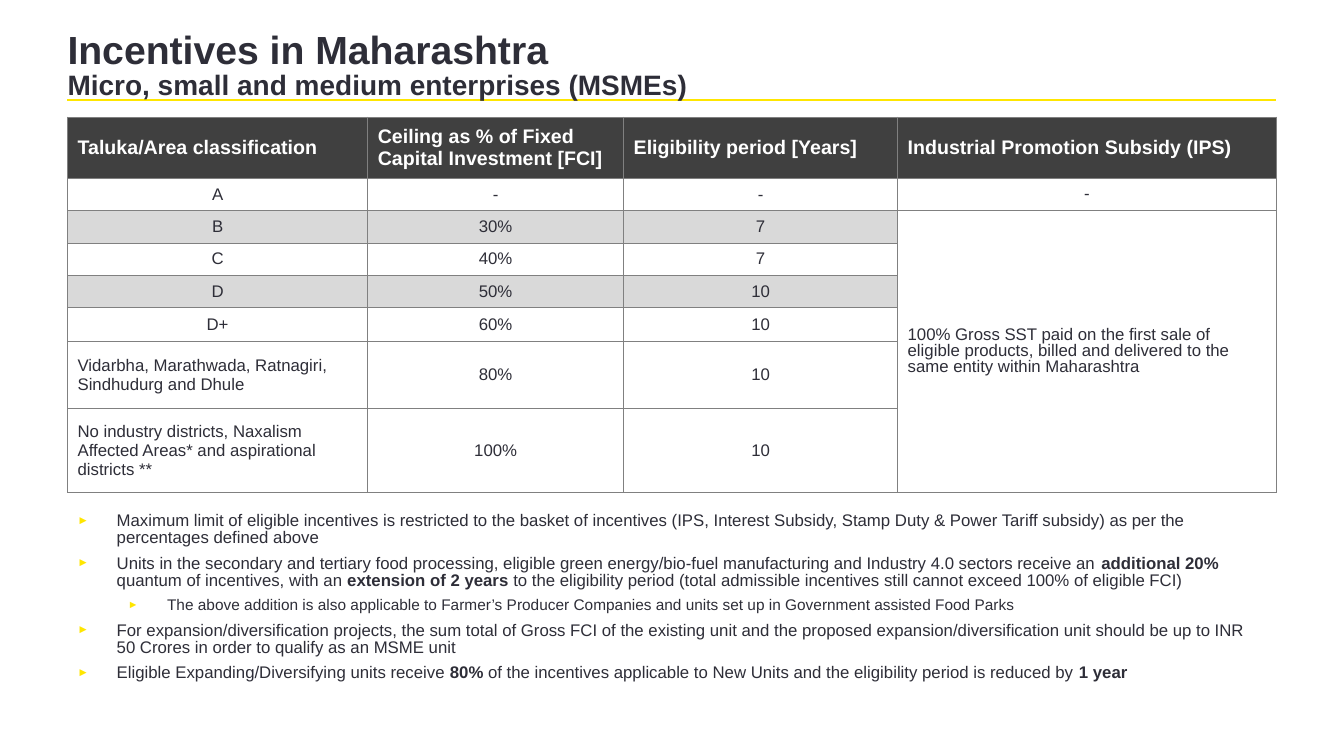
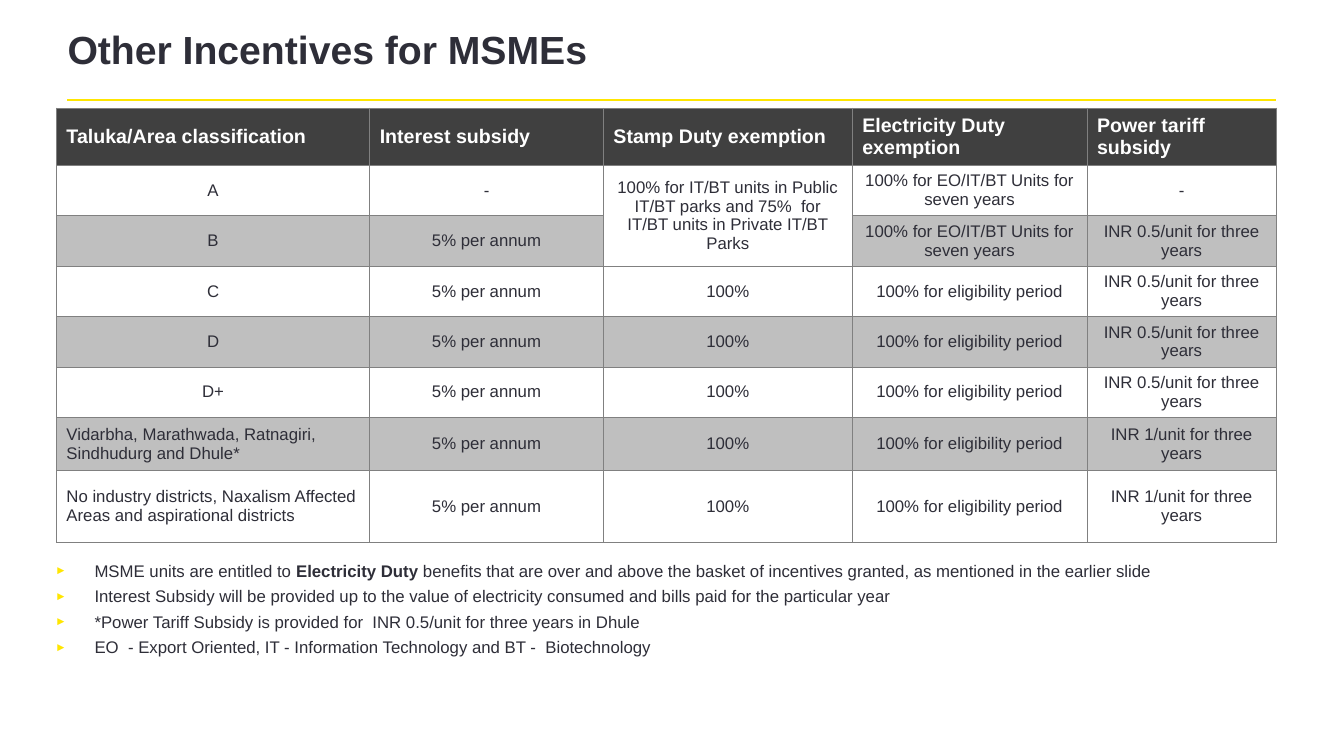
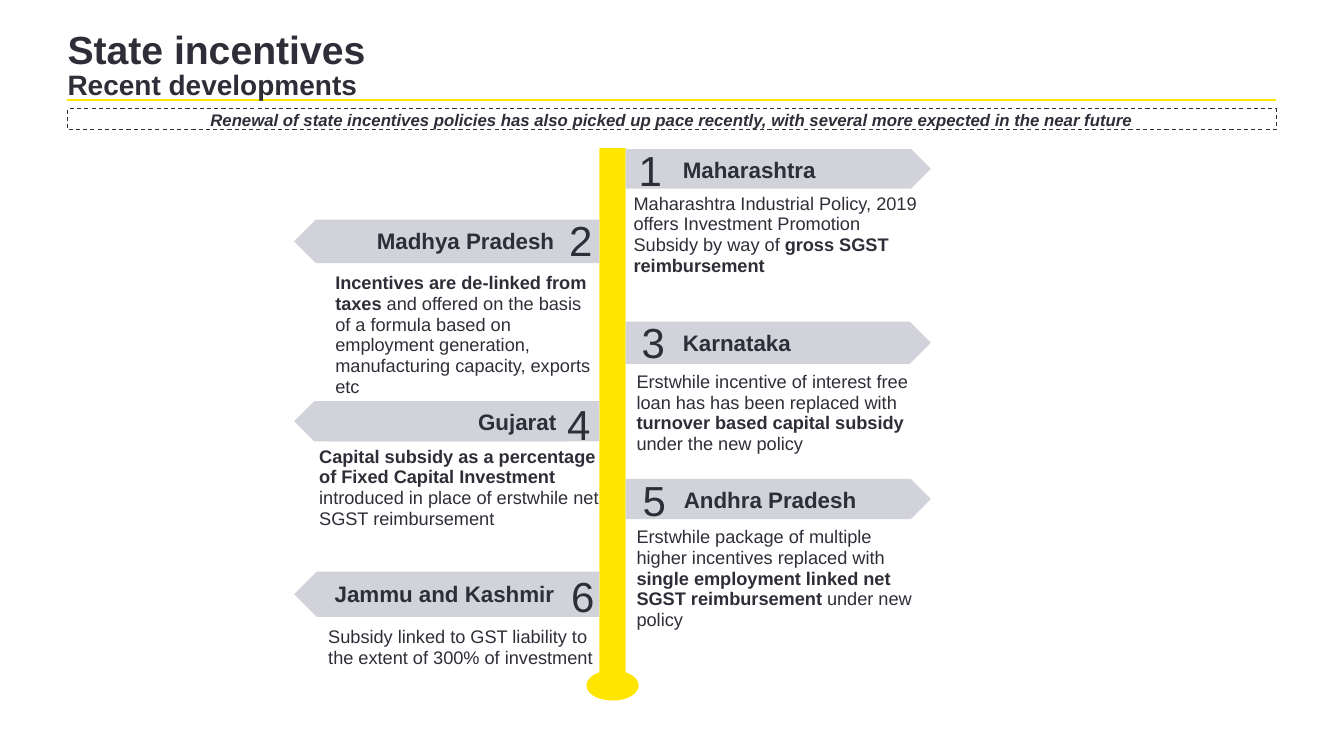
import copy
from dataclasses import dataclass

import lxml.etree
import pptx
import pptx.dml.color
import pptx.enum.dml
import pptx.enum.shapes
import pptx.enum.text
import pptx.oxml.ns
import pptx.util

Inches = pptx.util.Inches
Pt = pptx.util.Pt
ALIGN = pptx.enum.text.PP_ALIGN
ANCHOR = pptx.enum.text.MSO_ANCHOR
FIT = pptx.enum.text.MSO_AUTO_SIZE
SHAPE = pptx.enum.shapes.MSO_SHAPE
qn = pptx.oxml.ns.qn


@dataclass(frozen=True)
class Theme:
    font: str = "Arial"
    ink: str = "2E2E38"
    yellow: str = "FFE600"
    white: str = "FFFFFF"
    header: str = "404040"
    border: str = "808080"
    light_band: str = "D9D9D9"
    dark_band: str = "BFBFBF"
    arrow: str = "D2D2DA"
    title: int = 28
    subtitle: int = 20
    heading: int = 14
    body: int = 12
    sub_body: int = 11
    number: int = 30
    state: int = 16
    detail: int = 13


THEME = Theme()
LEFT, WIDTH, RULE_TOP = 0.67, 12, 0.99

TABLE_SLIDES = [
    {
        "title": ["Incentives in Maharashtra", "Micro, small and medium enterprises (MSMEs)"],
        "at": (LEFT, 1.16),
        "columns": [2.98, 2.54, 2.72, 3.76],
        "heights": [0.61, 0.32, 0.32, 0.32, 0.32, 0.34, 0.66, 0.84],
        "band": THEME.light_band,
        "banded": {2, 4},
        "spans": {(2, 3): 6},
        "left": {(2, 3), (6, 0), (7, 0)},
        "tight": {(1, 3), (2, 3)},
        "rows": [
            ["Taluka/Area classification", "Ceiling as % of Fixed Capital Investment [FCI]",
             "Eligibility period [Years]", "Industrial Promotion Subsidy (IPS)"],
            ["A", "-", "-", "-"],
            ["B", "30%", "7", "100% Gross SST paid on the first sale of eligible products, "
             "billed and delivered to the same entity within Maharashtra"],
            ["C", "40%", "7", ""],
            ["D", "50%", "10", ""],
            ["D+", "60%", "10", ""],
            ["Vidarbha, Marathwada, Ratnagiri, Sindhudurg and Dhule", "80%", "10", ""],
            ["No industry districts, Naxalism Affected Areas* and aspirational districts **",
             "100%", "10", ""],
        ],
        "notes_box": (LEFT, 5.04, WIDTH, 2.05),
        "notes": [
            (0, "Maximum limit of eligible incentives is restricted to the basket of incentives "
                "(IPS, Interest Subsidy, Stamp Duty & Power Tariff subsidy) as per the "
                "percentages defined above"),
            (0, "Units in the secondary and tertiary food processing, eligible green "
                "energy/bio-fuel manufacturing and Industry 4.0 sectors receive an "
                "|additional 20% |quantum of incentives, with an |extension of 2 years |"
                "to the eligibility period (total admissible incentives still cannot exceed "
                "100% of eligible FCI)"),
            (1, "The above addition is also applicable to Farmer’s Producer Companies and units "
                "set up in Government assisted Food Parks"),
            (0, "For expansion/diversification projects, the sum total of Gross FCI of the "
                "existing unit and the proposed expansion/diversification unit should be up to "
                "INR 50 Crores in order to qualify as an MSME unit"),
            (0, "Eligible Expanding/Diversifying units receive |80%| of the incentives applicable "
                "to New Units and the eligibility period is reduced by |1 year"),
        ],
    },
    {
        "title": ["Other Incentives for MSMEs"],
        "at": (0.56, 1.07),
        "columns": [3.11, 2.32, 2.47, 2.33, 1.88],
        "heights": [0.57, 0.5, 0.5, 0.5, 0.5, 0.5, 0.53, 0.71],
        "band": THEME.dark_band,
        "banded": {2, 4, 6},
        "spans": {(1, 2): 2},
        "left": {(6, 0), (7, 0)},
        "tight": set(),
        "rows": [
            ["Taluka/Area classification", "Interest subsidy", "Stamp Duty exemption",
             "Electricity Duty exemption", "Power tariff subsidy"],
            ["A", "-", "100% for IT/BT units in Public IT/BT parks and 75%  for IT/BT units in "
             "Private IT/BT Parks", "100% for EO/IT/BT Units for seven years", "-"],
            ["B", "5% per annum", "", "100% for EO/IT/BT Units for seven years",
             "INR 0.5/unit for three years"],
            ["C", "5% per annum", "100%", "100% for eligibility period",
             "INR 0.5/unit for three years"],
            ["D", "5% per annum", "100%", "100% for eligibility period",
             "INR 0.5/unit for three years"],
            ["D+", "5% per annum", "100%", "100% for eligibility period",
             "INR 0.5/unit for three years"],
            ["Vidarbha, Marathwada, Ratnagiri, Sindhudurg and Dhule*", "5% per annum", "100%",
             "100% for eligibility period", "INR 1/unit for three years"],
            ["No industry districts, Naxalism Affected Areas and aspirational districts",
             "5% per annum", "100%", "100% for eligibility period",
             "INR 1/unit for three years"],
        ],
        "notes_box": (0.45, 5.54, 12.33, 1.81),
        "notes": [
            (0, "MSME units are entitled to |Electricity Duty| benefits that are over and above "
                "the basket of incentives granted, as mentioned in the earlier slide"),
            (0, "Interest Subsidy will be provided up to the value of electricity consumed and "
                "bills paid for the particular year"),
            (0, "*Power Tariff Subsidy is provided for  INR 0.5/unit for three years in Dhule"),
            (0, "EO  - Export Oriented, IT - Information Technology and BT -  Biotechnology"),
        ],
    },
]

STATES_TITLE = ["State incentives", "Recent developments"]
BANNER = ("Renewal of state incentives policies has also picked up pace recently, "
          "with several more expected in the near future")
STATES = [
    {"name": "Maharashtra", "arrow": (1.48, 0.39), "number": (6.34, 1.47),
     "label": (6.68, 1.52, 2.6, 0.36), "detail": (6.19, 1.87, 3.08, 0.93),
     "text": "Maharashtra Industrial Policy, 2019 offers Investment Promotion Subsidy by way of "
             "|gross SGST reimbursement"},
    {"name": "Madhya Pradesh", "arrow": (2.18, 0.43), "number": (5.65, 2.16),
     "label": (3.23, 2.22, 2.37, 0.36), "detail": (3.23, 2.66, 2.83, 1.35),
     "text": "|Incentives are de-linked from taxes| and offered on the basis of a formula based "
             "on employment generation, manufacturing capacity, exports etc"},
    {"name": "Karnataka", "arrow": (3.19, 0.42), "number": (6.37, 3.18),
     "label": (6.68, 3.24, 2.6, 0.36), "detail": (6.22, 3.64, 3.03, 0.93),
     "text": "Erstwhile incentive of interest free loan has has been replaced with "
             "|turnover based capital subsidy |under the new policy"},
    {"name": "Gujarat", "arrow": (3.98, 0.4), "number": (5.63, 3.99),
     "label": (3.25, 4.02, 2.37, 0.36), "detail": (3.07, 4.38, 3.03, 0.93),
     "text": "|Capital subsidy as a percentage of Fixed Capital Investment |introduced in place "
             "of erstwhile net SGST reimbursement"},
    {"name": "Andhra Pradesh", "arrow": (4.75, 0.4), "number": (6.38, 4.74),
     "label": (6.69, 4.79, 2.37, 0.36), "detail": (6.22, 5.18, 3.06, 1.14),
     "text": "Erstwhile package of multiple higher incentives replaced with "
             "|single employment linked net SGST reimbursement |under new policy"},
    {"name": "Jammu and Kashmir", "arrow": (5.67, 0.45), "number": (5.67, 5.7),
     "label": (3.16, 5.73, 2.44, 0.36), "detail": (3.16, 6.17, 2.83, 0.72),
     "text": "Subsidy linked to GST liability to the extent of 300% of investment"},
]
POLE = (5.95, 1.47, 0.26, 5.26)
POLE_FOOT = (5.82, 6.65, 0.52, 0.3)
ARROW_WIDTH = 3.03

COMPACT = {"line_spacing": 0.85, "space_after": Pt(6)}
LOOSE = {"line_spacing": 0.95, "space_after": Pt(8)}
CENTRED = {"alignment": ALIGN.CENTER}
SNUG = {"margin_left": 0, "margin_right": 0, "margin_top": Inches(0.04), "margin_bottom": 0}
GROWING = {"word_wrap": True, "auto_size": FIT.SHAPE_TO_FIT_TEXT, "vertical_anchor": ANCHOR.TOP}


def apply(target, values):
    for name, value in values.items():
        setattr(target, name, value)


def colour(code):
    return pptx.dml.color.RGBColor.from_string(code)


def place(box):
    return [Inches(length) for length in box]


def add_span(para, text, size, ink=THEME.ink, **font):
    span = para.add_run()
    span.text = text
    apply(span.font, {"name": THEME.font, "size": Pt(size), **font})
    span.font.color.rgb = colour(ink)
    return span


def write(para, text, size, layout, bold=False, **font):
    apply(para, layout)
    for index, part in enumerate(text.split("|")):
        if part:
            add_span(para, part, size, bold=bold or index % 2 == 1, **font)


def add_text(page, box, text, size, layout, frame={}, **font):
    shape = page.shapes.add_textbox(*place(box))
    apply(shape.text_frame, {**GROWING, **frame})
    write(shape.text_frame.paragraphs[0], text, size, layout, **font)
    return shape


def add_block(page, kind, box, fill=None):
    shape = page.shapes.add_shape(kind, *place(box))
    shape.shadow.inherit = False
    shape.line.fill.background()
    if fill:
        shape.fill.solid()
        shape.fill.fore_color.rgb = colour(fill)
    else:
        shape.fill.background()
    return shape


def add_block_text(shape, text, size, layout, frame={}, **font):
    apply(shape.text_frame, {**GROWING, **frame})
    write(shape.text_frame.paragraphs[0], text, size, layout, **font)


def add_page(deck, lines):
    page = deck.slides.add_slide(deck.slide_layouts[5])
    title = page.shapes.title
    apply(title, dict(zip(("left", "top", "width", "height"), place((LEFT, 0.32, 12.01, 0.65)))))
    apply(title.text_frame, {**SNUG, "margin_top": 0, "word_wrap": True,
                             "auto_size": FIT.NONE, "vertical_anchor": ANCHOR.TOP})
    para = title.text_frame.paragraphs[0]
    apply(para, {"alignment": ALIGN.LEFT, "line_spacing": 0.85})
    span = add_span(para, lines[0], THEME.title, bold=True)
    for line in lines[1:]:
        para.add_line_break()
        para._p[-1].append(copy.deepcopy(span.font._element))
        add_span(para, line, THEME.subtitle, bold=True)
    return page


def add_rule(page):
    rule = page.shapes.add_connector(pptx.enum.shapes.MSO_CONNECTOR.STRAIGHT,
                                     *place((LEFT, RULE_TOP, LEFT + WIDTH, RULE_TOP)))
    rule.line.color.rgb = colour(THEME.yellow)
    rule.line.width = Pt(1.5)
    lxml.etree.SubElement(rule.element.spPr, qn("a:effectLst"))
    page.slide_layout.shapes.element.append(rule.element)


def add_borders(cell):
    properties = cell._tc.get_or_add_tcPr()
    for side in ("lnL", "lnR", "lnT", "lnB"):
        line = lxml.etree.SubElement(properties, qn(f"a:{side}"), w=str(Pt(0.5)))
        fill = lxml.etree.SubElement(line, qn("a:solidFill"))
        lxml.etree.SubElement(fill, qn("a:srgbClr"), val=THEME.border)


def add_grid(page, data):
    rows, columns, heights = data["rows"], data["columns"], data["heights"]
    box = (*data["at"], sum(columns), sum(heights))
    table = page.shapes.add_table(len(rows), len(columns), *place(box)).table
    table.horz_banding = False
    for column, width in zip(table.columns, columns):
        column.width = Inches(width)
    for row, height in zip(table.rows, heights):
        row.height = Inches(height)
    for (row, column), count in data["spans"].items():
        table.cell(row, column).merge(table.cell(row + count - 1, column))
    for row, texts in enumerate(rows):
        for column, text in enumerate(texts):
            spot, cell = (row, column), table.cell(row, column)
            head = row == 0
            banded = row in data["banded"] and spot not in data["spans"]
            add_borders(cell)
            cell.fill.solid()
            cell.fill.fore_color.rgb = colour(
                THEME.header if head else data["band"] if banded else THEME.white)
            cell.vertical_anchor = ANCHOR.MIDDLE
            layout = {"alignment": ALIGN.LEFT if head or spot in data["left"] else ALIGN.CENTER}
            if spot in data["tight"]:
                layout.update(COMPACT)
            write(cell.text_frame.paragraphs[0], text, THEME.heading if head else THEME.body,
                  layout, bold=head, ink=THEME.white if head else THEME.ink)


def add_bullet(para, level):
    properties = para._p.get_or_add_pPr()
    apply(para, {"level": level})
    properties.set("marL", str(Inches(0.39 + 0.5 * level)))
    properties.set("indent", str(-Inches(0.39)))
    tint = lxml.etree.SubElement(properties, qn("a:buClr"))
    lxml.etree.SubElement(tint, qn("a:srgbClr"), val=THEME.yellow)
    lxml.etree.SubElement(properties, qn("a:buSzPct"), val="70000")
    lxml.etree.SubElement(properties, qn("a:buFont"), typeface=THEME.font)
    lxml.etree.SubElement(properties, qn("a:buChar"), char="►")


def add_bullets(page, box, items):
    frame = page.shapes.add_textbox(*place(box)).text_frame
    apply(frame, GROWING)
    for index, (level, text) in enumerate(items):
        para = frame.add_paragraph() if index else frame.paragraphs[0]
        add_bullet(para, level)
        write(para, text, THEME.sub_body if level else THEME.body, COMPACT)


def add_states(page):
    add_block(page, SHAPE.OVAL, POLE_FOOT, THEME.yellow)
    add_block(page, SHAPE.RECTANGLE, POLE, THEME.yellow)
    pole_left, pole_right = POLE[0], POLE[0] + POLE[2]
    for index, state in enumerate(STATES):
        on_left = index % 2 == 1
        top, height = state["arrow"]
        left = pole_left - ARROW_WIDTH if on_left else pole_right
        arrow = add_block(page, SHAPE.PENTAGON, (left, top, ARROW_WIDTH, height), THEME.arrow)
        if on_left:
            arrow.element.spPr.xfrm.set("flipH", "1")
    for index, state in enumerate(STATES):
        if index % 2 == 1:
            label = add_block(page, SHAPE.RECTANGLE, state["label"], THEME.arrow)
            add_block_text(label, state["name"], THEME.state,
                           {**LOOSE, "alignment": ALIGN.RIGHT}, bold=True)
        else:
            add_text(page, state["label"], state["name"], THEME.state, LOOSE, bold=True)
        add_text(page, (*state["number"], 0.23, 0.47), str(index + 1), THEME.number,
                 {**COMPACT, **CENTRED}, {**SNUG, "word_wrap": False})
        add_text(page, state["detail"], state["text"], THEME.detail, LOOSE)


def add_banner(page):
    banner = add_block(page, SHAPE.RECTANGLE, (LEFT, 1.08, WIDTH, 0.21))
    banner.line.color.rgb = colour(THEME.ink)
    apply(banner.line, {"width": Pt(0.75), "dash_style": pptx.enum.dml.MSO_LINE.DASH})
    add_block_text(banner, BANNER, THEME.body, {**COMPACT, **CENTRED}, SNUG,
                   bold=True, italic=True)


def main():
    deck = pptx.Presentation()
    apply(deck, {"slide_width": Inches(13.34), "slide_height": Inches(7.5)})
    for data in TABLE_SLIDES:
        page = add_page(deck, data["title"])
        add_grid(page, data)
        add_bullets(page, data["notes_box"], data["notes"])
    page = add_page(deck, STATES_TITLE)
    add_rule(page)
    add_states(page)
    add_banner(page)
    deck.save("out.pptx")


if __name__ == "__main__":
    main()
